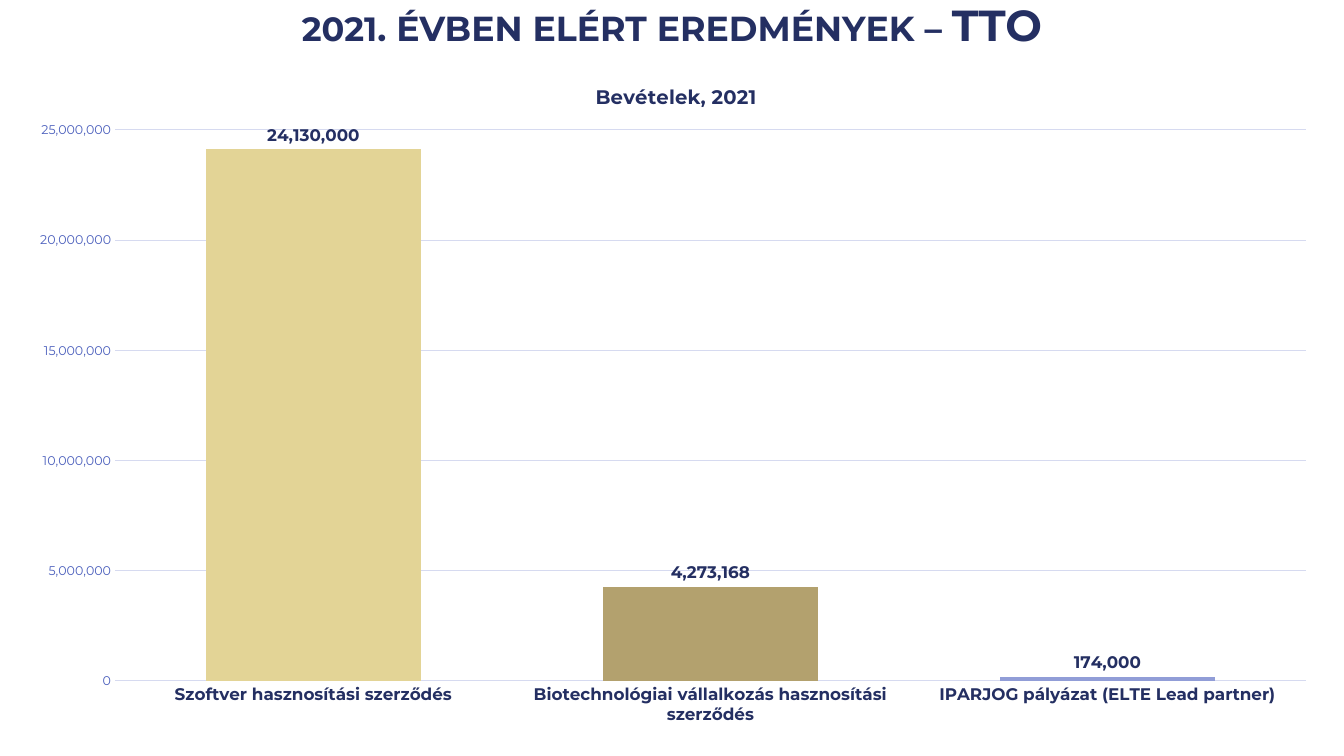
import pptx
import pptx.chart.data
import pptx.dml.color
import pptx.enum.chart
import pptx.enum.text
import pptx.oxml
import pptx.oxml.ns
import pptx.util
from dataclasses import dataclass

PX = 914400 / 100.8


@dataclass(frozen=True)
class Theme:
    font: str = "Montserrat"
    navy: str = "242F62"
    blue: str = "4C60BD"
    pale: str = "D6DAF0"
    sand: str = "E3D496"
    khaki: str = "B3A16E"
    lilac: str = "919DD7"
    year: int = 30
    heading: int = 31
    chart_title: int = 14
    label: int = 12
    body: int = 10
    scale: int = 9


def px(n):
    return pptx.util.Emu(round(n * PX))


def rgb(value):
    return pptx.dml.color.RGBColor.from_string(value)


def assign(obj, values):
    for name, value in values.items():
        setattr(obj, name, value)


class SlideBuilder:
    def __init__(self, prs, theme):
        self.theme = theme
        self.slide = prs.slides.add_slide(prs.slide_layouts[5])

    def style_font(self, font, size, color, bold=False):
        assign(font, {"name": self.theme.font, "size": pptx.util.Pt(size), "bold": bold})
        font.color.rgb = rgb(color)

    def style_line(self, line):
        line.color.rgb = rgb(self.theme.pale)
        line.width = pptx.util.Pt(0.75)

    def title(self, box, runs):
        """Fill the title placeholder with small-caps (text, size) runs."""
        sp = self.slide.shapes.title
        assign(sp, dict(zip(("left", "top", "width", "height"), map(px, box))))
        tf = sp.text_frame
        assign(tf, {
            "word_wrap": True,
            "auto_size": pptx.enum.text.MSO_AUTO_SIZE.NONE,
            "vertical_anchor": pptx.enum.text.MSO_ANCHOR.MIDDLE,
        })
        p = tf.paragraphs[0]
        assign(p, {"alignment": pptx.enum.text.PP_ALIGN.CENTER, "line_spacing": 0.9})
        for text, size in runs:
            r = p.add_run()
            r.text = text
            self.style_font(r.font, size, self.theme.navy, True)
            r.font._element.set("cap", "small")

    def column_chart(self, box, title, columns):
        """Draw one series from (category, value, colour) columns."""
        t = self.theme
        cats, vals, colors = zip(*columns)
        data = pptx.chart.data.CategoryChartData(number_format="#,##0")
        data.categories = cats
        data.add_series("Series 1", vals)
        kind = pptx.enum.chart.XL_CHART_TYPE.COLUMN_CLUSTERED
        chart = self.slide.shapes.add_chart(kind, *map(px, box), data).chart
        chart.has_legend = False
        self.style_font(chart.font, t.body, t.navy)

        tf = chart.chart_title.text_frame
        tf.text = title
        self.style_font(tf.paragraphs[0].runs[0].font, t.chart_title, t.navy, True)
        chart.chart_title.include_in_layout = False

        plot = chart.plots[0]
        assign(plot, {"gap_width": 85, "overlap": -27, "vary_by_categories": False,
                      "has_data_labels": True})
        labels = plot.data_labels
        assign(labels, {
            "show_value": True,
            "number_format": "#,##0",
            "number_format_is_linked": False,
            "position": pptx.enum.chart.XL_LABEL_POSITION.OUTSIDE_END,
        })
        self.style_font(labels.font, t.label, t.navy, True)
        series = plot.series[0]
        series.format.fill.solid()
        series.format.fill.fore_color.rgb = rgb(t.khaki)
        for i, color in enumerate(colors):
            if color != t.khaki:
                fill = series.points[i].format.fill
                fill.solid()
                fill.fore_color.rgb = rgb(color)
        self.axes(chart)
        return chart

    def axes(self, chart):
        t = self.theme
        none = pptx.enum.chart.XL_TICK_MARK.NONE
        ticks = {"major_tick_mark": none, "minor_tick_mark": none}
        cat, val = chart.category_axis, chart.value_axis
        assign(cat, ticks)
        self.style_font(cat.tick_labels.font, t.label, t.navy, True)
        self.style_line(cat.format.line)
        assign(val, {**ticks, "minimum_scale": 0, "maximum_scale": 25000000,
                     "major_unit": 5000000, "has_major_gridlines": True})
        assign(val.tick_labels, {"number_format": "#,##0", "number_format_is_linked": False})
        self.style_font(val.tick_labels.font, t.scale, t.blue)
        val.format.line.fill.background()
        self.style_line(val.major_gridlines.format.line)

    def place(self, parent, **fractions):
        """Set a manual layout on a chart title or plot area."""
        qn = pptx.oxml.ns.qn
        layout = parent.find(qn("c:layout"))
        if layout is None:
            layout = pptx.oxml.parse_xml(f"<c:layout {pptx.oxml.ns.nsdecls('c')}/>")
            text = parent.find(qn("c:tx"))
            parent.insert(0 if text is None else 1, layout)
        for child in list(layout):
            layout.remove(child)
        manual = layout.makeelement(qn("c:manualLayout"), {})
        layout.append(manual)
        values = {"xMode": "edge", "yMode": "edge", **fractions}
        if "w" in fractions:
            values = {"layoutTarget": "inner", **values}
        for name, value in values.items():
            manual.append(manual.makeelement(qn(f"c:{name}"), {"val": str(value)}))


def main():
    prs = pptx.Presentation()
    prs.slide_width, prs.slide_height = px(1344), px(756)
    theme = Theme()
    s = SlideBuilder(prs, theme)
    s.title((0, 0, 1344, 54), [
        ("2021", theme.year),
        (". évben elért eredmények – TTO", theme.heading),
    ])
    left, top, width, height = box = (14, 54, 1318, 684)
    chart = s.column_chart(box, "Bevételek, 2021", [
        ("Szoftver hasznosítási szerződés", 24130000, theme.sand),
        ("Biotechnológiai vállalkozás hasznosítási szerződés", 4273168, theme.khaki),
        ("IPARJOG pályázat (ELTE Lead partner)", 174000, theme.lilac),
    ])
    s.place(chart.chart_title._element, x=(592 - left) / width, y=(80 - top) / height)
    s.place(chart._chartSpace.chart.plotArea, x=(115 - left) / width, y=(130 - top) / height,
            w=1191 / width, h=551 / height)
    prs.save("out.pptx")


if __name__ == "__main__":
    main()
